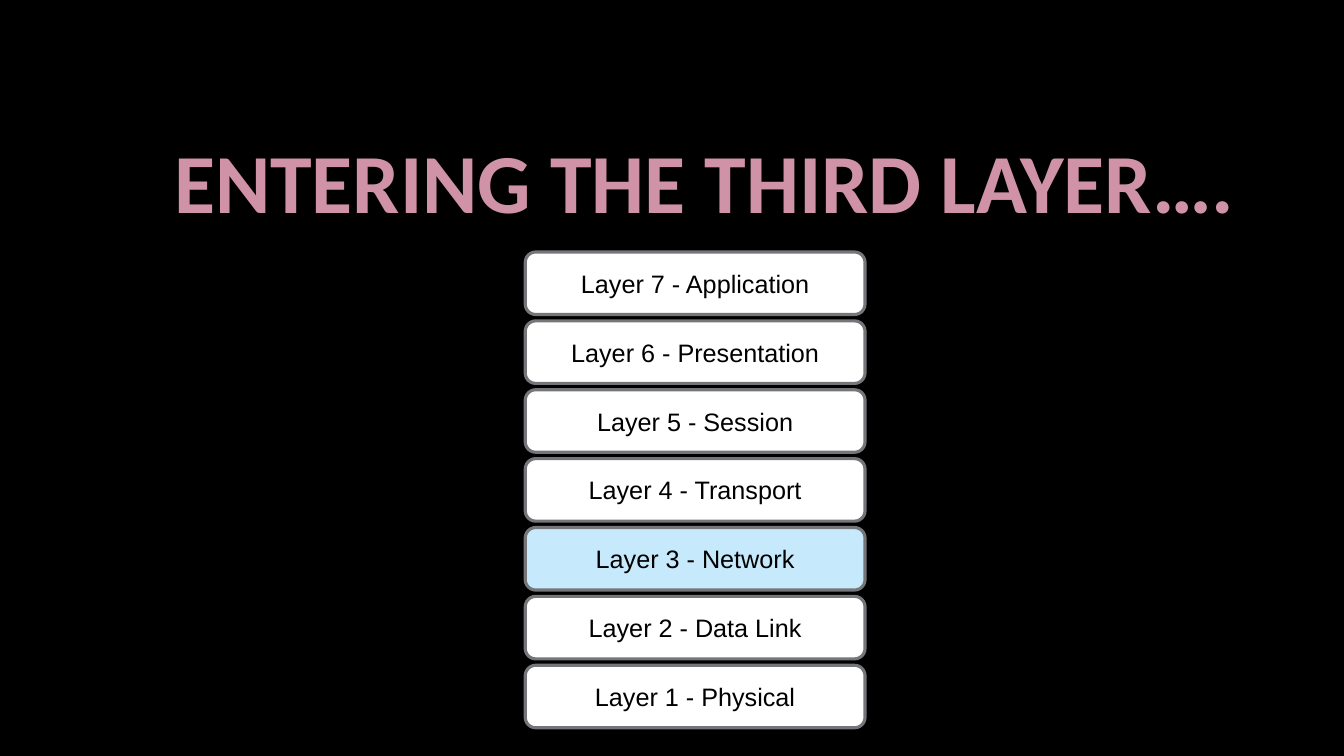
from dataclasses import dataclass

from pptx import Presentation
from pptx.dml.color import RGBColor
from pptx.enum.shapes import MSO_SHAPE
from pptx.enum.text import MSO_ANCHOR, MSO_AUTO_SIZE, PP_ALIGN
from pptx.shapes.group import GroupShape
from pptx.slide import Slide
from pptx.util import Inches, Pt

BLACK = RGBColor(0x00, 0x00, 0x00)
WHITE = RGBColor(0xFF, 0xFF, 0xFF)
PINK = RGBColor(0xD0, 0x92, 0xA7)
PALE_BLUE = RGBColor(0xC6, 0xEA, 0xFB)
GREY = RGBColor(0x75, 0x76, 0x79)

STACK_LEFT, STACK_TOP = 5.21, 2.5
LAYER_WIDTH, LAYER_HEIGHT = 3.37, 0.62
LAYER_PITCH = 4.1 / 6  # seven layers, first top to last top


@dataclass(frozen=True)
class Layer:
    number: int
    role: str
    fill: RGBColor = WHITE


LAYERS = [
    Layer(7, "Application"),
    Layer(6, "Presentation"),
    Layer(5, "Session"),
    Layer(4, "Transport"),
    Layer(3, "Network", PALE_BLUE),
    Layer(2, "Data Link"),
    Layer(1, "Physical"),
]


def write_heading(slide: Slide, text: str) -> None:
    heading = slide.shapes.title
    heading.left, heading.top = Inches(1.01), Inches(1.42)
    heading.width, heading.height = Inches(11.76), Inches(0.89)
    frame = heading.text_frame
    frame.word_wrap = True
    frame.auto_size = MSO_AUTO_SIZE.NONE
    frame.vertical_anchor = MSO_ANCHOR.TOP
    frame.margin_left, frame.margin_right = Inches(0.2), Inches(0)
    frame.margin_top, frame.margin_bottom = Inches(0.1), Inches(0)
    line = frame.paragraphs[0]
    line.alignment = PP_ALIGN.CENTER
    line.line_spacing = 0.75
    run = line.add_run()
    run.text = text
    run.font.name, run.font.size, run.font.bold = "Calibri", Pt(60), True
    run.font.color.rgb = PINK


def draw_layer(stack: GroupShape, layer: Layer, top: float) -> None:
    box = stack.shapes.add_shape(
        MSO_SHAPE.ROUNDED_RECTANGLE,
        Inches(STACK_LEFT), Inches(top), Inches(LAYER_WIDTH), Inches(LAYER_HEIGHT),
    )
    box.shadow.inherit = False
    box.fill.solid()
    box.fill.fore_color.rgb = layer.fill
    box.line.color.rgb = GREY
    box.line.width = Pt(2.25)
    frame = box.text_frame
    frame.word_wrap = True
    frame.vertical_anchor = MSO_ANCHOR.MIDDLE
    frame.margin_left = frame.margin_right = Inches(0.13)
    frame.margin_top = frame.margin_bottom = Inches(0.08)
    label = frame.paragraphs[0]
    label.alignment = PP_ALIGN.CENTER
    run = label.add_run()
    run.text = f"Layer {layer.number} - {layer.role}"
    run.font.name, run.font.size = "Arial", Pt(18)
    run.font.color.rgb = BLACK


def main() -> None:
    deck = Presentation()
    deck.slide_width, deck.slide_height = Inches(13.33), Inches(7.5)
    slide = deck.slides.add_slide(deck.slide_layouts.get_by_name("Title Only"))
    slide.background.fill.solid()
    slide.background.fill.fore_color.rgb = BLACK

    # Heading
    write_heading(slide, "ENTERING THE THIRD LAYER….")

    # Stack of network layers, top to bottom
    stack = slide.shapes.add_group_shape()
    for row, layer in enumerate(LAYERS):
        draw_layer(stack, layer, STACK_TOP + row * LAYER_PITCH)

    deck.save("out.pptx")


if __name__ == "__main__":
    main()
